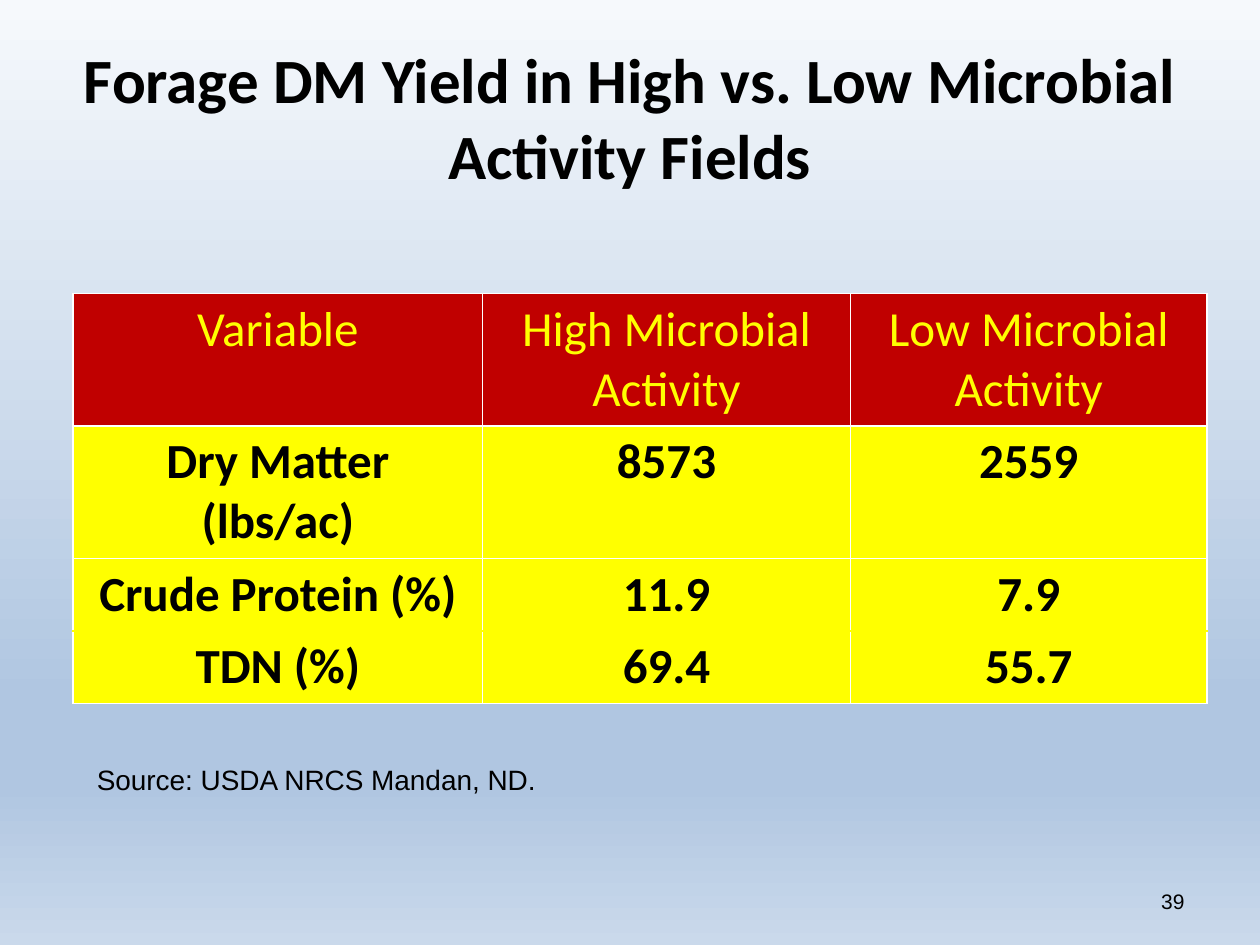
from dataclasses import dataclass

from lxml.etree import SubElement
from pptx import Presentation
from pptx.dml.color import RGBColor
from pptx.enum.text import MSO_ANCHOR as Anchor, PP_ALIGN as Align
from pptx.oxml.ns import qn
from pptx.util import Inches, Pt

BLACK = RGBColor(0x00, 0x00, 0x00)
WHITE = RGBColor(0xFF, 0xFF, 0xFF)
YELLOW = RGBColor(0xFF, 0xFF, 0x00)
RED = RGBColor(0xC0, 0x00, 0x00)
SKY = RGBColor(0xF6, 0xF9, 0xFC)
BLUE = RGBColor(0xB0, 0xC6, 0xE1)
MIST = RGBColor(0xCA, 0xD9, 0xEB)
BACKGROUND_STOPS = ((0, SKY), (74, BLUE), (83, BLUE), (100, MIST))


@dataclass(frozen=True)
class Label:
    text: str
    box: tuple[float, float, float, float]
    font: dict
    align: Align = Align.LEFT
    anchor: Anchor = Anchor.TOP


@dataclass(frozen=True)
class Row:
    values: tuple[str, str, str]
    height: float
    fill: RGBColor = YELLOW
    color: RGBColor = BLACK
    bold: bool = True
    top: RGBColor = WHITE
    bottom: RGBColor = WHITE


LABELS = (
    Label("Forage DM Yield in High vs. Low Microbial Activity Fields", (0.5, 0.3, 9, 1.25),
          {"name": "Calibri", "size": Pt(36), "bold": True}, Align.CENTER, Anchor.MIDDLE),
    Label("39", (7.17, 6.95, 2.33, 0.4),
          {"name": "Arial", "size": Pt(12)}, Align.RIGHT, Anchor.MIDDLE),
    Label("Source: USDA NRCS Mandan, ND.", (0.67, 6, 5, 0.37),
          {"name": "Arial", "size": Pt(16)}),
)
COLUMN_WIDTHS = (3.25, 2.92, 2.83)
ROWS = (
    Row(("Variable", "High Microbial Activity", "Low Microbial Activity"), 1.05,
        fill=RED, color=YELLOW, bold=False),
    Row(("Dry Matter (lbs/ac)", "8573", "2559"), 1.05),
    Row(("Crude Protein (%)", "11.9", "7.9"), 0.57, bottom=YELLOW),
    Row(("TDN (%)", "69.4", "55.7"), 0.57, top=YELLOW),
)


def write_text(frame, text: str, align: Align, color: RGBColor, font: dict) -> None:
    paragraph = frame.paragraphs[0]
    paragraph.alignment = align
    run = paragraph.add_run()
    run.text = text
    for name, value in font.items():
        setattr(run.font, name, value)
    run.font.color.rgb = color


def add_solid_line(parent, tag: str, color: RGBColor) -> None:
    line = SubElement(parent, qn(tag), w=str(Pt(1)))
    fill = SubElement(line, qn("a:solidFill"))
    SubElement(fill, qn("a:srgbClr"), val=str(color))


def paint_background(slide) -> None:
    fill = slide.background.fill
    fill.gradient()
    fill.gradient_angle = 270
    stop_list = next(slide.element.iter(qn("a:gsLst")))
    for stop in list(stop_list):
        stop_list.remove(stop)
    for percent, color in BACKGROUND_STOPS:
        stop = SubElement(stop_list, qn("a:gs"), pos=str(percent * 1000))
        SubElement(stop, qn("a:srgbClr"), val=str(color))


def add_label(slide, label: Label) -> None:
    shape = slide.shapes.add_textbox(*map(Inches, label.box))
    frame = shape.text_frame
    frame.word_wrap = True
    frame.vertical_anchor = label.anchor
    write_text(frame, label.text, label.align, BLACK, label.font)


def fill_cell(cell, text: str, row: Row) -> None:
    font = {"name": "Calibri", "size": Pt(28), "bold": row.bold}
    write_text(cell.text_frame, text, Align.CENTER, row.color, font)
    properties = cell._tc.get_or_add_tcPr()
    borders = {"a:lnL": WHITE, "a:lnR": WHITE, "a:lnT": row.top, "a:lnB": row.bottom}
    for tag, color in borders.items():
        add_solid_line(properties, tag, color)
    cell.fill.solid()
    cell.fill.fore_color.rgb = row.fill


def add_yield_table(slide) -> None:
    height = sum(row.height for row in ROWS)
    table = slide.shapes.add_table(
        len(ROWS), len(COLUMN_WIDTHS), Inches(0.58), Inches(2.33),
        Inches(sum(COLUMN_WIDTHS)), Inches(height)).table
    table.horz_banding = False
    for column, width in zip(table.columns, COLUMN_WIDTHS):
        column.width = Inches(width)
    for table_row, row in zip(table.rows, ROWS):
        table_row.height = Inches(row.height)
        for cell, text in zip(table_row.cells, row.values):
            fill_cell(cell, text, row)


def main() -> None:
    presentation = Presentation()
    presentation.slide_width = Inches(10)
    presentation.slide_height = Inches(7.5)
    slide = presentation.slides.add_slide(presentation.slide_layouts[6])
    paint_background(slide)
    add_yield_table(slide)
    for label in LABELS:
        add_label(slide, label)
    presentation.save("out.pptx")


if __name__ == "__main__":
    main()
